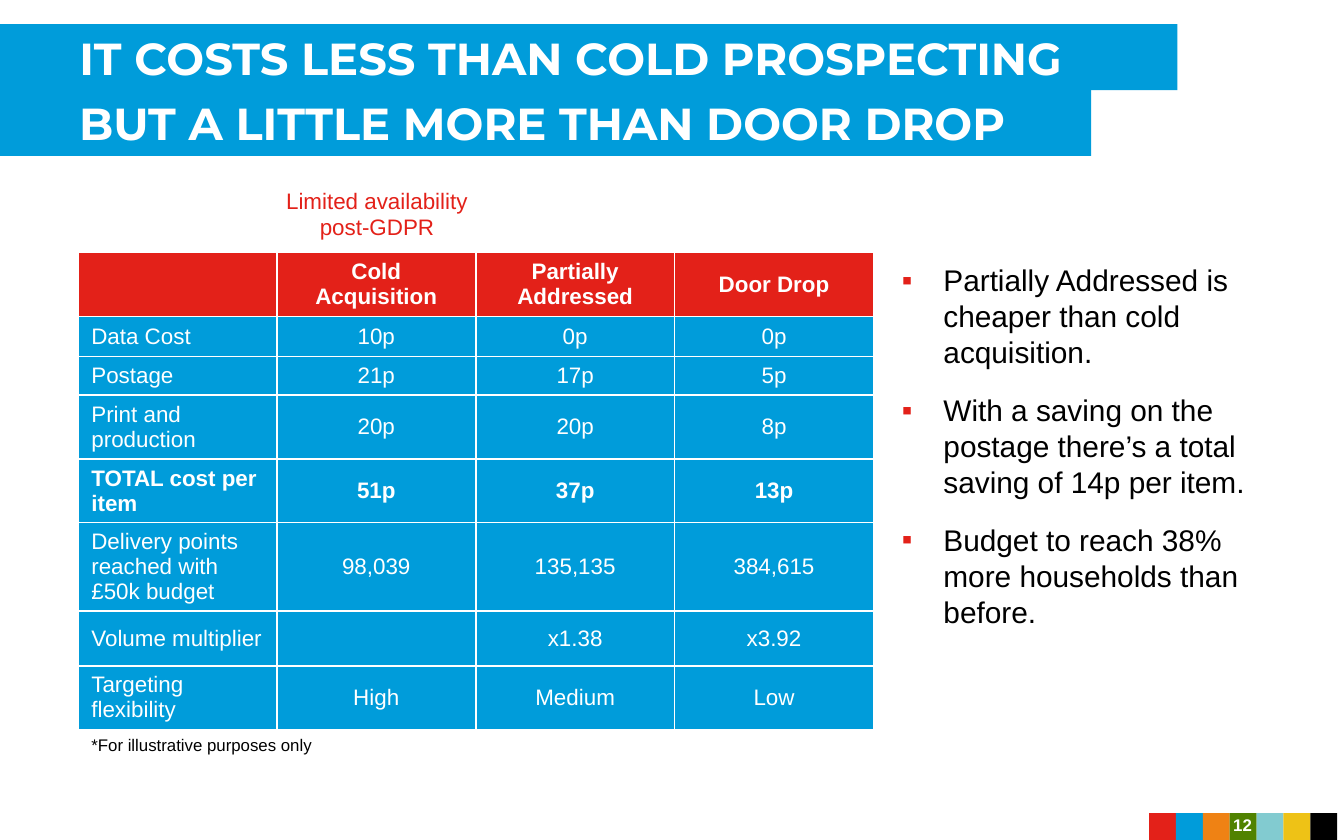
from dataclasses import dataclass
from lxml.etree import SubElement
from pptx import Presentation
from pptx.dml.color import RGBColor
from pptx.enum.shapes import MSO_SHAPE
from pptx.enum.text import MSO_ANCHOR, MSO_AUTO_SIZE, PP_ALIGN
from pptx.oxml.ns import qn
from pptx.util import Inches, Pt


@dataclass(frozen=True)
class Theme:
    red: str = "E32119"
    blue: str = "009CDA"
    orange: str = "EF8214"
    green: str = "508200"
    aqua: str = "82CBD0"
    yellow: str = "EEC216"
    black: str = "000000"
    white: str = "FFFFFF"
    body_font: str = "Arial"
    title_font: str = "Montserrat"
    title_size: int = 24
    bullet_size: int = 16
    table_size: int = 12
    small_size: int = 9


theme = Theme()


def format_text(frame, size, color, bold=False, align=PP_ALIGN.LEFT, font=theme.body_font):
    for para in frame.paragraphs:
        para.alignment = align
        for span in para.runs:
            span.font.name = font
            span.font.size = Pt(size)
            span.font.bold = bold
            span.font.color.rgb = RGBColor.from_string(color)


def place(shape, left, top, width, height):
    shape.left, shape.top = Inches(left), Inches(top)
    shape.width, shape.height = Inches(width), Inches(height)
    shape.text_frame.word_wrap = True
    shape.text_frame.auto_size = MSO_AUTO_SIZE.NONE


deck = Presentation()
deck.slide_width = Inches(10)
deck.slide_height = Inches(6.25)
page = deck.slides.add_slide(deck.slide_layouts[1])
shapes = page.shapes

stripe_colors = [theme.red, theme.blue, theme.orange, theme.green,
                 theme.aqua, theme.yellow, theme.black]
for index, color in enumerate(stripe_colors):
    square = shapes.add_shape(MSO_SHAPE.RECTANGLE, Inches(8.55 + 0.2 * index),
                              Inches(6.05), Inches(0.2), Inches(0.2))
    square.shadow.inherit = False
    square.fill.solid()
    square.fill.fore_color.rgb = RGBColor.from_string(color)
    square.line.fill.background()

page_number = shapes.add_textbox(0, 0, 0, 0)
place(page_number, 8.97, 5.97, 0.55, 0.33)
page_number.text_frame.text = "12"
page_number.text_frame.vertical_anchor = MSO_ANCHOR.MIDDLE
format_text(page_number.text_frame, theme.small_size, theme.white, True, PP_ALIGN.CENTER)

headlines = [
    (shapes.title, "IT COSTS LESS THAN COLD PROSPECTING", 0.18, 8.8),
    (shapes.add_textbox(0, 0, 0, 0), "BUT A LITTLE MORE THAN DOOR DROP", 0.67, 8.16),
]
for banner, text, top, width in headlines:
    place(banner, -0.04, top, width, 0.49)
    banner.fill.solid()
    banner.fill.fore_color.rgb = RGBColor.from_string(theme.blue)
    frame = banner.text_frame
    frame.text = text
    frame.word_wrap = False
    frame.margin_left = Inches(0.63)
    frame.margin_top = frame.margin_bottom = Inches(0.04)
    frame.vertical_anchor = MSO_ANCHOR.MIDDLE
    format_text(frame, theme.title_size, theme.white, True, font=theme.title_font)

cost_rows = [
    ("", "Cold Acquisition", "Partially Addressed", "Door Drop"),
    ("Data Cost", "10p", "0p", "0p"),
    ("Postage", "21p", "17p", "5p"),
    ("Print and production", "20p", "20p", "8p"),
    ("TOTAL cost per item", "51p", "37p", "13p"),
    ("Delivery points reached with £50k budget", "98,039", "135,135", "384,615"),
    ("Volume multiplier", "", "x1.38", "x3.92"),
    ("Targeting flexibility", "High", "Medium", "Low"),
    ("*For illustrative purposes only", "", "", ""),
]
row_heights = [0.47, 0.3, 0.28, 0.42, 0.47, 0.66, 0.37, 0.42, 0.42]
bold_rows = (0, 4)
note_row = len(cost_rows) - 1

table = shapes.add_table(len(cost_rows), 4, Inches(0.58), Inches(1.88),
                         Inches(5.92), Inches(sum(row_heights))).table
for column in table.columns:
    column.width = Inches(1.48)
for row, (values, height) in enumerate(zip(cost_rows, row_heights)):
    table.rows[row].height = Inches(height)
    fill = {0: theme.red, note_row: theme.white}.get(row, theme.blue)
    for column, value in enumerate(values):
        cell = table.cell(row, column)
        cell.fill.solid()
        cell.fill.fore_color.rgb = RGBColor.from_string(fill)
        cell.vertical_anchor = MSO_ANCHOR.MIDDLE
        cell.text_frame.text = value
        format_text(cell.text_frame, theme.table_size, theme.white, row in bold_rows,
                    PP_ALIGN.CENTER if column else PP_ALIGN.LEFT)
note = table.cell(note_row, 0)
note.merge(table.cell(note_row, 3))
note.vertical_anchor = MSO_ANCHOR.TOP
format_text(note.text_frame, theme.small_size, theme.black)

body = page.placeholders[1]
place(body, 6.61, 1.9, 3.07, 3.29)
body.fill.solid()
body.fill.fore_color.rgb = RGBColor.from_string(theme.white)
body.text_frame.text = "\n".join([
    "Partially Addressed is cheaper than cold acquisition.",
    "With a saving on the postage there’s a total saving of 14p per item.",
    "Budget to reach 38% more households than before.",
])
format_text(body.text_frame, theme.bullet_size, theme.black)
for para in body.text_frame.paragraphs:
    para.space_before = Pt(0)
    para.space_after = Pt(12)
    properties = para._p.get_or_add_pPr()
    properties.set("marL", str(Inches(0.31)))
    properties.set("indent", str(-Inches(0.31)))
    bullet_color = SubElement(properties, qn("a:buClr"))
    SubElement(bullet_color, qn("a:srgbClr"), val=theme.red)
    SubElement(properties, qn("a:buFont"), typeface=theme.body_font)
    SubElement(properties, qn("a:buChar"), char="▪")

callout = shapes.add_textbox(0, 0, 0, 0)
place(callout, 2.01, 1.34, 1.59, 0.5)
callout.text_frame.text = "Limited availability post-GDPR"
format_text(callout.text_frame, theme.table_size, theme.red, align=PP_ALIGN.CENTER)

deck.save("out.pptx")
